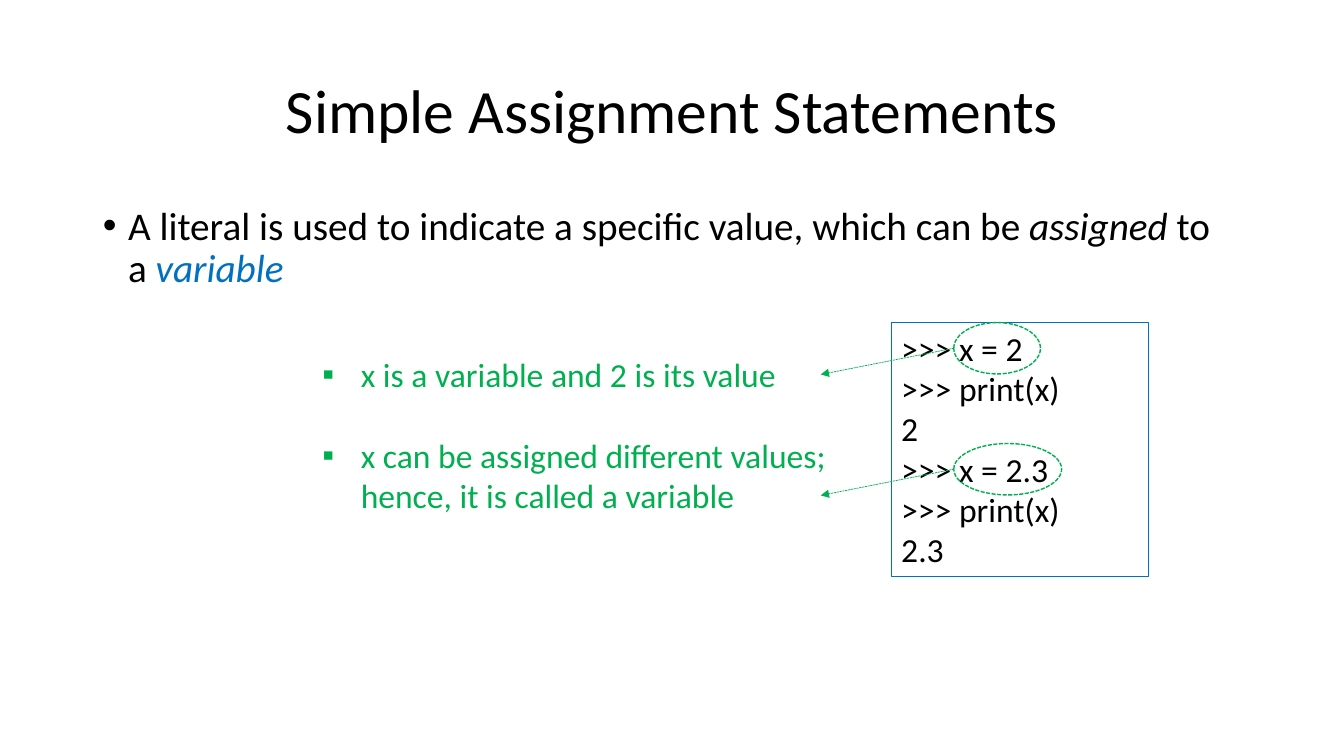
from lxml.etree import SubElement
from pptx import Presentation
from pptx.dml.color import RGBColor
from pptx.enum.dml import MSO_LINE
from pptx.enum.shapes import MSO_CONNECTOR, MSO_SHAPE
from pptx.enum.text import MSO_ANCHOR, MSO_AUTO_SIZE, PP_ALIGN
from pptx.oxml.ns import qn
from pptx.util import Inches, Pt

BLACK = RGBColor(0x00, 0x00, 0x00)
BLUE = RGBColor(0x00, 0x70, 0xC0)
GREEN = RGBColor(0x00, 0xB0, 0x50)
FONT = "Calibri"

# Code listing: every line is one row of the grid
CODE_LEFT, CODE_TOP, ROW = 8.84, 3.2, 0.4
CODE_LINES = [">>> x = 2", ">>> print(x)", "2",
              ">>> x = 2.3", ">>> print(x)", "2.3"]
ASSIGNMENTS = [(0, 0.86), (3, 1.07)]  # code row, width of its ring
RING_LEFT, RING_HEIGHT = 9.46, 0.51
ARROW_END, ARROW_DROP = 8.14, 0.26
NOTES = ["x is a variable and 2 is its value",
         "x can be assigned different values; \vhence, it is called a variable"]


def place(shape, left, top, width, height):
    bounds = {"left": left, "top": top, "width": width, "height": height}
    for name, value in bounds.items():
        setattr(shape, name, Inches(value))


def set_format(target, **values):
    for name, value in values.items():
        setattr(target, name, value)


def add_span(para, text, size, color=BLACK, italic=False):
    """Add text to a paragraph; a vertical tab starts a new line."""
    for index, piece in enumerate(text.split("\v")):
        if index:
            para.add_line_break()
        if piece:
            span = para.add_run()
            span.text = piece
            set_format(span.font, name=FONT, size=Pt(size), italic=italic)
            span.font.color.rgb = color


def set_bullet(para, symbol, typeface, indent):
    properties = para._p.get_or_add_pPr()
    properties.set("marL", str(Inches(indent)))
    properties.set("indent", str(-Inches(indent)))
    SubElement(properties, qn("a:buFont"), typeface=typeface)
    SubElement(properties, qn("a:buChar"), char=symbol)


def set_line(line, color, width, dash=None):
    line.color.rgb = color
    line.width = Pt(width)
    if dash:
        line.dash_style = dash


def add_outline(slide, kind, bounds, color, width, dash=None):
    shape = slide.shapes.add_shape(kind, *map(Inches, bounds))
    shape.shadow.inherit = False
    shape.fill.background()
    set_line(shape.line, color, width, dash)
    return shape


def add_title(slide, text):
    title = slide.shapes.title
    place(title, 0.92, 0.4, 11.5, 1.45)
    set_format(title.text_frame, vertical_anchor=MSO_ANCHOR.MIDDLE,
               auto_size=MSO_AUTO_SIZE.NONE)
    para = title.text_frame.paragraphs[0]
    set_format(para, alignment=PP_ALIGN.CENTER, line_spacing=0.9)
    add_span(para, text, 44)


def add_body(slide, spans):
    body = slide.placeholders[1]
    place(body, 0.92, 2, 11.82, 5.13)
    body.text_frame.auto_size = MSO_AUTO_SIZE.NONE
    para = body.text_frame.paragraphs[0]
    set_format(para, line_spacing=0.9, space_before=Pt(10))
    set_bullet(para, "•", "Arial", 0.25)
    for text, color, italic in spans:
        add_span(para, text, 28, color, italic)


def add_code(slide):
    height = ROW * len(CODE_LINES) + 0.12
    box = add_outline(slide, MSO_SHAPE.RECTANGLE,
                      (CODE_LEFT, CODE_TOP, 2.55, height), BLUE, 0.75)
    frame = box.text_frame
    set_format(frame, word_wrap=True, vertical_anchor=MSO_ANCHOR.TOP)
    for index, text in enumerate(CODE_LINES):
        para = frame.add_paragraph() if index else frame.paragraphs[0]
        para.alignment = PP_ALIGN.LEFT
        add_span(para, text, 24)


def add_arrow(slide, start, end):
    arrow = slide.shapes.add_connector(
        MSO_CONNECTOR.STRAIGHT, *map(Inches, start + end))
    set_line(arrow.line, GREEN, 0.5, MSO_LINE.SQUARE_DOT)
    SubElement(arrow.line._get_or_add_ln(), qn("a:tailEnd"), type="triangle")
    SubElement(arrow._element.spPr, qn("a:effectLst"))


def add_marker(slide, row, width):
    """Ring one assignment and point from it to its note."""
    top = CODE_TOP + row * ROW
    middle = top + RING_HEIGHT / 2
    add_arrow(slide, (RING_LEFT, middle), (ARROW_END, middle + ARROW_DROP))
    add_outline(slide, MSO_SHAPE.OVAL, (RING_LEFT, top, width, RING_HEIGHT),
                GREEN, 1, MSO_LINE.SQUARE_DOT)


def add_notes(slide):
    box = slide.shapes.add_textbox(*map(Inches, (3.1, 3.46, 5.32, 1.72)))
    frame = box.text_frame
    frame.word_wrap = True
    for index, text in enumerate(NOTES):
        para = frame.add_paragraph() if index else frame.paragraphs[0]
        if index:
            para.space_before = Pt(29)
        set_bullet(para, "▪", "Arial", 0.38)
        add_span(para, text, 24, GREEN)


def main():
    deck = Presentation()
    set_format(deck, slide_width=Inches(13.33), slide_height=Inches(7.5))
    slide = deck.slides.add_slide(deck.slide_layouts[1])

    # Heading and statement
    add_title(slide, "Simple Assignment Statements")
    add_body(slide, [
        ("A literal is used to indicate a specific value, which can be ",
         BLACK, False),
        ("assigned", BLACK, True),
        (" to \va ", BLACK, False),
        ("variable", BLUE, True),
    ])

    # Code example with its explanations
    add_code(slide)
    for row, width in ASSIGNMENTS:
        add_marker(slide, row, width)
    add_notes(slide)

    deck.save("out.pptx")


if __name__ == "__main__":
    main()
